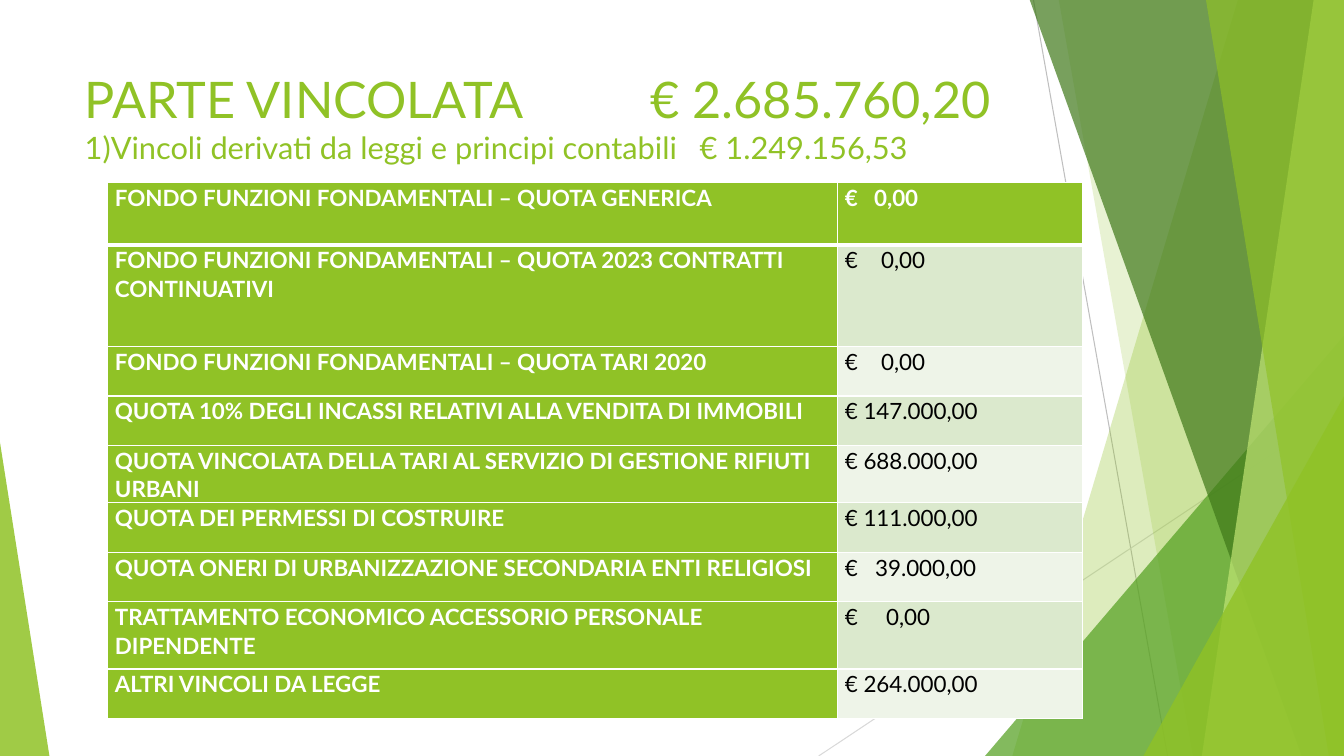
from lxml.etree import SubElement
from pptx import Presentation
from pptx.dml.color import RGBColor
from pptx.enum.shapes import MSO_CONNECTOR, MSO_SHAPE
from pptx.enum.text import MSO_ANCHOR, MSO_AUTO_SIZE, PP_ALIGN
from pptx.oxml import parse_xml
from pptx.oxml.ns import nsdecls, qn
from pptx.util import Inches, Pt

LIME = RGBColor(0x90, 0xC2, 0x26)
GREEN = RGBColor(0x54, 0xA0, 0x21)
FOREST = RGBColor(0x3F, 0x78, 0x19)
PALE_LIME = RGBColor(0xC0, 0xE4, 0x74)
BAND_DARK = RGBColor(0xDB, 0xE9, 0xCD)
BAND_LIGHT = RGBColor(0xEE, 0xF4, 0xE8)
WHITE = RGBColor(0xFF, 0xFF, 0xFF)
BLACK = RGBColor(0, 0, 0)
GREY = RGBColor(0xBF, 0xBF, 0xBF)
LIGHT_GREY = RGBColor(0xD9, 0xD9, 0xD9)
FONT = "Lato"
WIDTH, HEIGHT = 13.33, 7.5

# text, size, tab position of the amount
HEADINGS = [
    ("PARTE VINCOLATA\t€ 2.685.760,20", 36, 5.61),
    ("1)Vincoli derivati da leggi e principi contabili\t€ 1.249.156,53", 22, 6.1),
]
# label, amount, tab position of the figure, row height
FUNDS = [
    ("FONDO FUNZIONI FONDAMENTALI – QUOTA GENERICA", "€\t0,00", 0.29, 0.62),
    ("FONDO FUNZIONI FONDAMENTALI – QUOTA 2023 CONTRATTI CONTINUATIVI", "€\t0,00", 0.36, 1.01),
    ("FONDO FUNZIONI FONDAMENTALI – QUOTA TARI 2020", "€\t0,00", 0.36, 0.49),
    ("QUOTA 10% DEGLI INCASSI RELATIVI ALLA VENDITA DI IMMOBILI", "€ 147.000,00", None, 0.49),
    ("QUOTA VINCOLATA DELLA TARI AL SERVIZIO DI GESTIONE RIFIUTI URBANI", "€ 688.000,00", None, 0.57),
    ("QUOTA DEI PERMESSI DI COSTRUIRE", "€ 111.000,00", None, 0.49),
    ("QUOTA ONERI DI URBANIZZAZIONE SECONDARIA ENTI RELIGIOSI", "€\t39.000,00", 0.3, 0.49),
    ("TRATTAMENTO ECONOMICO ACCESSORIO PERSONALE DIPENDENTE", "€\t0,00", 0.41, 0.67),
    ("ALTRI VINCOLI DA LEGGE", "€ 264.000,00", None, 0.49),
]
COLUMNS = [7.24, 2.43]

# start, end, colour
RAYS = [
    ((10.25, 0), (11.58, HEIGHT), GREY),
    ((WIDTH, 4.03), (8.12, HEIGHT), LIGHT_GREY),
]
# Panels reach the right edge: top-left x, bottom-left x, colour, opacity.
# Triangles: left, top, width, apex, colour, opacity; they stand on the bottom edge.
FACETS = [
    ("panel", (12.28, 10.04), LIME, 30),
    ("panel", (10.5, 11.83), LIME, 20),
    ("triangle", (9.77, 3.33, 3.56, 1), GREEN, 72),
    ("panel", (10.21, 12.91), FOREST, 70),
    ("panel", (13.03, 11.92), PALE_LIME, 70),
    ("panel", (11.96, 13.18), LIME, 65),
    ("triangle", (11.34, 3.93, 1.99, 1), LIME, 80),
    ("triangle", (0, 4.39, 0.49, 0), LIME, 85),
]


def add_ray(shapes, start, end, color):
    ray = shapes.add_connector(MSO_CONNECTOR.STRAIGHT, *map(Inches, start + end))
    ray.line.color.rgb = color
    ray.line.width = Pt(0.75)
    SubElement(ray._element.spPr, qn("a:effectLst"))


def add_facet(shapes, kind, geometry, color, opacity):
    if kind == "panel":
        top_x, bottom_x = geometry
        outline = shapes.build_freeform(Inches(top_x), Inches(-0.01))
        corners = [(WIDTH, -0.01), (WIDTH, HEIGHT), (bottom_x, HEIGHT)]
        outline.add_line_segments([(Inches(x), Inches(y)) for x, y in corners])
        facet = outline.convert_to_shape()
    else:
        left, top, width, apex = geometry
        box = map(Inches, (left, top, width, HEIGHT - top))
        facet = shapes.add_shape(MSO_SHAPE.ISOSCELES_TRIANGLE, *box)
        facet.adjustments[0] = apex
    facet.shadow.inherit = False
    facet.fill.solid()
    facet.fill.fore_color.rgb = color
    facet.line.fill.background()
    fill_color = facet._element.spPr.find(qn("a:solidFill"))[0]
    SubElement(fill_color, qn("a:alpha"), val=str(opacity * 1000))


def style(paragraph, size, color, bold=False, tab=None):
    paragraph.alignment = PP_ALIGN.LEFT
    for run in paragraph.runs:
        run.font.name = FONT
        run.font.size = Pt(size)
        run.font.bold = bold
        run.font.color.rgb = color
    if tab:
        tabs = SubElement(paragraph._p.get_or_add_pPr(), qn("a:tabLst"))
        SubElement(tabs, qn("a:tab"), pos=str(Inches(tab)), algn="l")


def set_borders(cell, top=1, bottom=1):
    """Draw white borders; widths are in points."""
    for place, (side, width) in enumerate([("L", 1), ("R", 1), ("T", top), ("B", bottom)]):
        border = parse_xml(
            f'<a:ln{side} {nsdecls("a")} w="{Pt(width)}"><a:solidFill>'
            f'<a:srgbClr val="{WHITE}"/></a:solidFill></a:ln{side}>')
        cell._tc.get_or_add_tcPr().insert(place, border)


def fill_cell(cell, text, row, background, color, bold, tab=None):
    cell.margin_left = cell.margin_right = Inches(0.07)
    cell.margin_top = cell.margin_bottom = 0
    cell.fill.solid()
    cell.fill.fore_color.rgb = background
    set_borders(cell, top=3 if row == 1 else 1, bottom=3 if row == 0 else 1)
    cell.text_frame.text = text
    entry = cell.text_frame.paragraphs[0]
    entry.line_spacing = 1.07
    entry.space_after = Pt(8)
    style(entry, 16, color, bold, tab)


def add_title(title):
    title.left, title.top, title.width, title.height = map(Inches, (0.74, 0.63, 9.4, 1.18))
    frame = title.text_frame
    frame.text = "\n".join(text for text, _, _ in HEADINGS)
    frame.word_wrap = True
    frame.auto_size = MSO_AUTO_SIZE.NONE
    frame.vertical_anchor = MSO_ANCHOR.TOP
    for heading, (_, size, tab) in zip(frame.paragraphs, HEADINGS):
        style(heading, size, LIME, tab=tab)


def add_funds(shapes):
    total = sum(height for *_, height in FUNDS)
    box = map(Inches, (1.07, 1.81, sum(COLUMNS), total))
    funds = shapes.add_table(len(FUNDS), len(COLUMNS), *box).table
    funds.horz_banding = False
    for column, width in zip(funds.columns, COLUMNS):
        column.width = Inches(width)
    for row, (label, amount, tab, height) in enumerate(FUNDS):
        funds.rows[row].height = Inches(height)
        fill_cell(funds.cell(row, 0), label, row, LIME, WHITE, True)
        if row == 0:
            background, color = LIME, WHITE
        else:
            background, color = (BAND_DARK if row % 2 else BAND_LIGHT), BLACK
        fill_cell(funds.cell(row, 1), amount, row, background, color, row == 0, tab)


def main():
    deck = Presentation()
    deck.slide_width, deck.slide_height = Inches(WIDTH), Inches(HEIGHT)
    slide = deck.slides.add_slide(deck.slide_layouts[5])
    for ray in RAYS:
        add_ray(slide.shapes, *ray)
    for facet in FACETS:
        add_facet(slide.shapes, *facet)
    add_title(slide.shapes.title)
    add_funds(slide.shapes)
    deck.save("out.pptx")


if __name__ == "__main__":
    main()
